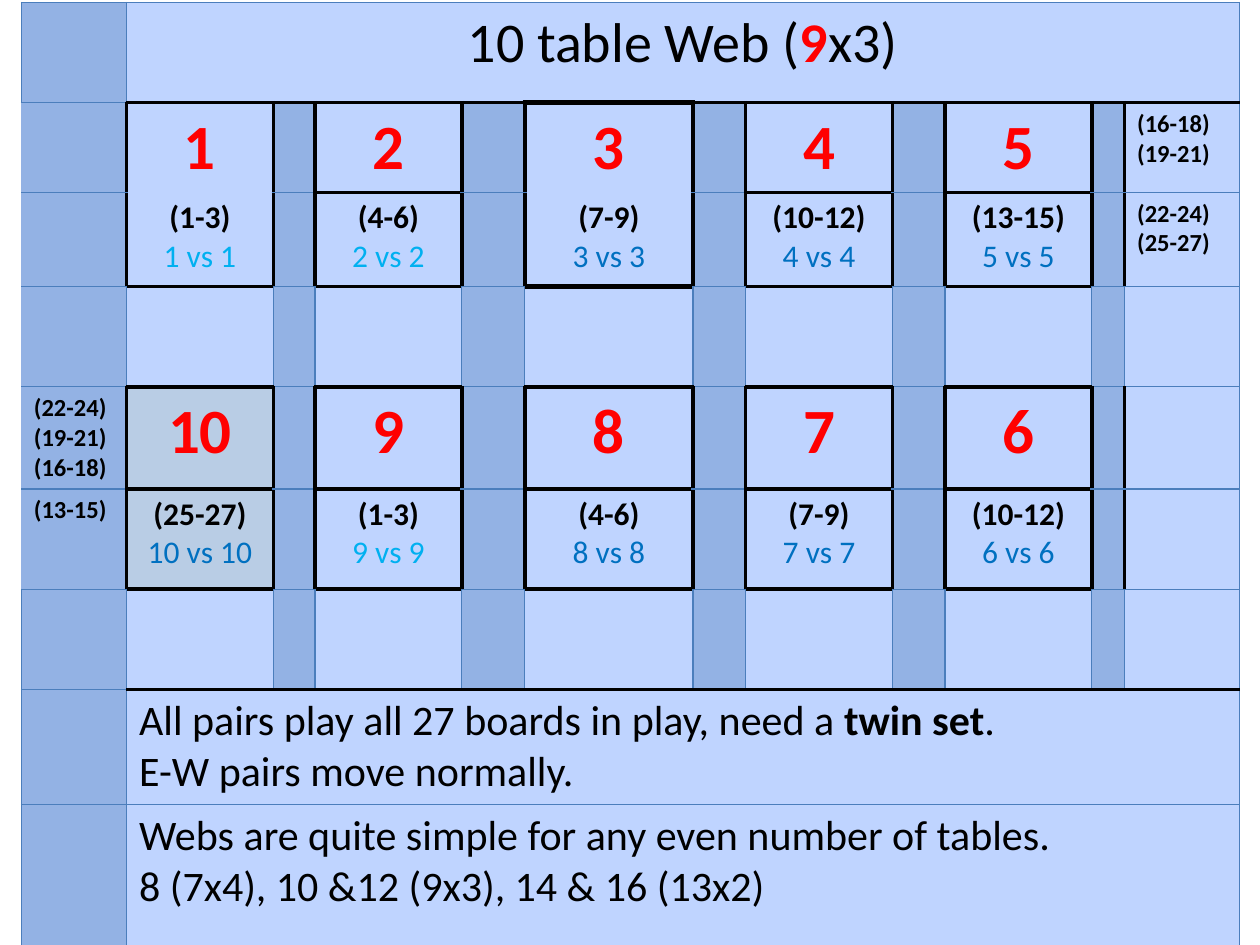
import lxml.etree
import pptx
import pptx.dml.color
import pptx.enum.text
import pptx.oxml.ns
import pptx.util

Cm, Pt = pptx.util.Cm, pptx.util.Pt
RGBColor = pptx.dml.color.RGBColor

LIGHT = RGBColor(0xBF, 0xD4, 0xFF)
DARK = RGBColor(0x93, 0xB2, 0xE4)
SHADED = RGBColor(0xB9, 0xCD, 0xE5)
GRID = RGBColor(0x4B, 0x7E, 0xBC)
BLACK = RGBColor(0, 0, 0)
RED = RGBColor(0xFF, 0, 0)
CYAN = RGBColor(0, 0xB0, 0xF0)
BLUE = RGBColor(0, 0x70, 0xC0)

COL_WIDTHS = [2.12, 2.96, 0.84, 2.96, 1.27, 3.39, 1.06, 2.96, 1.06, 2.96, 0.66, 2.31]
ROW_HEIGHTS = [2.02, 1.8, 1.9, 2.02, 2.02, 2.02, 2.02, 2.29, 3.5]
LAST_COL = len(COL_WIDTHS) - 1
MERGED_ROWS = (0, 7, 8)
THIN, THICK, HEAVY = (GRID, 0.75), (BLACK, 2.25), (BLACK, 3)

# Top row of each band of tables: (table number, boards) from left to right
TABLE_BANDS = {
    1: [(1, "1-3"), (2, "4-6"), (3, "7-9"), (4, "10-12"), (5, "13-15")],
    4: [(10, "25-27"), (9, "1-3"), (8, "4-6"), (7, "7-9"), (6, "10-12")],
}
CYAN_TABLES = (1, 2, 9)
UNDIVIDED_TABLES = (1, 3)
SIDE_BOARDS = {
    (1, LAST_COL): ["16-18", "19-21"],
    (2, LAST_COL): ["22-24", "25-27"],
    (4, 0): ["22-24", "19-21", "16-18"],
    (5, 0): ["13-15"],
}
NOTES = {
    7: [[("All pairs play all 27 boards in play, need a ", False),
         ("twin set", True), (".", False)],
        [("E-W pairs move normally.", False)]],
    8: [[("Webs are quite simple for any even number of tables.", False)],
        [("8 (7x4), 10 &12 (9x3), 14 & 16 (13x2)", False)]],
}


def write(cell, paragraphs, size, centred=False):
    """Fill a cell; each paragraph is a list of (text, colour, bold) runs."""
    tf = cell.text_frame
    for i, runs in enumerate(paragraphs):
        p = tf.add_paragraph() if i else tf.paragraphs[0]
        if centred:
            p.alignment = pptx.enum.text.PP_ALIGN.CENTER
        for text, colour, bold in runs:
            r = p.add_run()
            r.text = text
            r.font.name = "Calibri"
            r.font.size = Pt(size)
            r.font.bold = bold
            r.font.color.rgb = colour


def plan_edges():
    """Map (row, column, side) to a line, or to None where there is no line."""
    edges = {}
    for row in range(len(ROW_HEIGHTS)):
        for col in range(len(COL_WIDTHS)):
            for side in "LRTB":
                edges[row, col, side] = THIN
            if row in MERGED_ROWS and col:
                if col > 1:
                    edges[row, col, "L"] = None
                if 1 < col < LAST_COL:
                    edges[row, col, "R"] = None

    def put(row, col, side, line):
        edges[row, col, side] = line
        d_row, d_col, opposite = {"L": (0, -1, "R"), "R": (0, 1, "L"),
                                  "T": (-1, 0, "B"), "B": (1, 0, "T")}[side]
        if (row + d_row, col + d_col, opposite) in edges:
            edges[row + d_row, col + d_col, opposite] = line

    for row in range(1, 6):
        put(row, 0, "L", None)
    for row in (0, 6):
        for col in range(1, LAST_COL + 1):
            put(row, col, "B", THICK)
    for top, band in TABLE_BANDS.items():
        for i, (number, _) in enumerate(band):
            col = 2 * i + 1
            line = HEAVY if number == 3 else THICK
            for row in (top, top + 1):
                put(row, col, "L", line)
                put(row, col, "R", line)
            put(top, col, "T", line)
            put(top, col, "B", None if number in UNDIVIDED_TABLES else THICK)
            put(top + 1, col, "B", line)
        for row in (top, top + 1):
            put(row, LAST_COL, "L", THICK)
    return edges


def draw_edge(cell, side, line):
    qn = pptx.oxml.ns.qn
    tc_pr = cell._tc.get_or_add_tcPr()
    ln = lxml.etree.SubElement(tc_pr, qn("a:ln" + side))
    if line is None:
        lxml.etree.SubElement(ln, qn("a:noFill"))
        return
    colour, width = line
    ln.set("w", str(Pt(width)))
    fill = lxml.etree.SubElement(ln, qn("a:solidFill"))
    lxml.etree.SubElement(fill, qn("a:srgbClr")).set("val", str(colour))


def add_grid(slide):
    shape = slide.shapes.add_table(
        len(ROW_HEIGHTS), len(COL_WIDTHS), Cm(0.43), Cm(0.05),
        Cm(sum(COL_WIDTHS)), Cm(sum(ROW_HEIGHTS)))
    table = shape.table
    table.first_row = table.horz_banding = False
    for column, width in zip(table.columns, COL_WIDTHS):
        column.width = Cm(width)
    for row, height in zip(table.rows, ROW_HEIGHTS):
        row.height = Cm(height)
    for (row, col, side), line in plan_edges().items():
        draw_edge(table.cell(row, col), side, line)
    for row in range(len(ROW_HEIGHTS)):
        for col in range(len(COL_WIDTHS)):
            is_gap = col == 0 or (col % 2 == 0 and row not in MERGED_ROWS)
            paint(table.cell(row, col), DARK if is_gap else LIGHT)
    for row in MERGED_ROWS:
        table.cell(row, 1).merge(table.cell(row, LAST_COL))
    return table


def paint(cell, colour):
    cell.fill.solid()
    cell.fill.fore_color.rgb = colour


def fill_bands(table):
    for top, band in TABLE_BANDS.items():
        for i, (number, boards) in enumerate(band):
            head, body = (table.cell(top + k, 2 * i + 1) for k in (0, 1))
            write(head, [[(str(number), RED, True)]], 36, centred=True)
            colour = CYAN if number in CYAN_TABLES else BLUE
            write(body, [[(f"({boards})", BLACK, True)],
                         [(f"{number} vs {number}", colour, False)]], 18, centred=True)
            if number == 10:
                paint(head, SHADED)
                paint(body, SHADED)


def main():
    prs = pptx.Presentation()
    prs.slide_width, prs.slide_height = Cm(25.4), Cm(19.05)
    s = prs.slides.add_slide(prs.slide_layouts[6])
    table = add_grid(s)
    write(table.cell(0, 1), [[("10 table Web (", BLACK, False), ("9", RED, True),
                              ("x3)", BLACK, False)]], 32, centred=True)
    fill_bands(table)
    for (row, col), boards in SIDE_BOARDS.items():
        write(table.cell(row, col), [[(f"({b})", BLACK, True)] for b in boards], 14)
    for row, lines in NOTES.items():
        write(table.cell(row, 1),
              [[(text, BLACK, bold) for text, bold in line] for line in lines], 24)
    prs.save("out.pptx")


if __name__ == "__main__":
    main()
